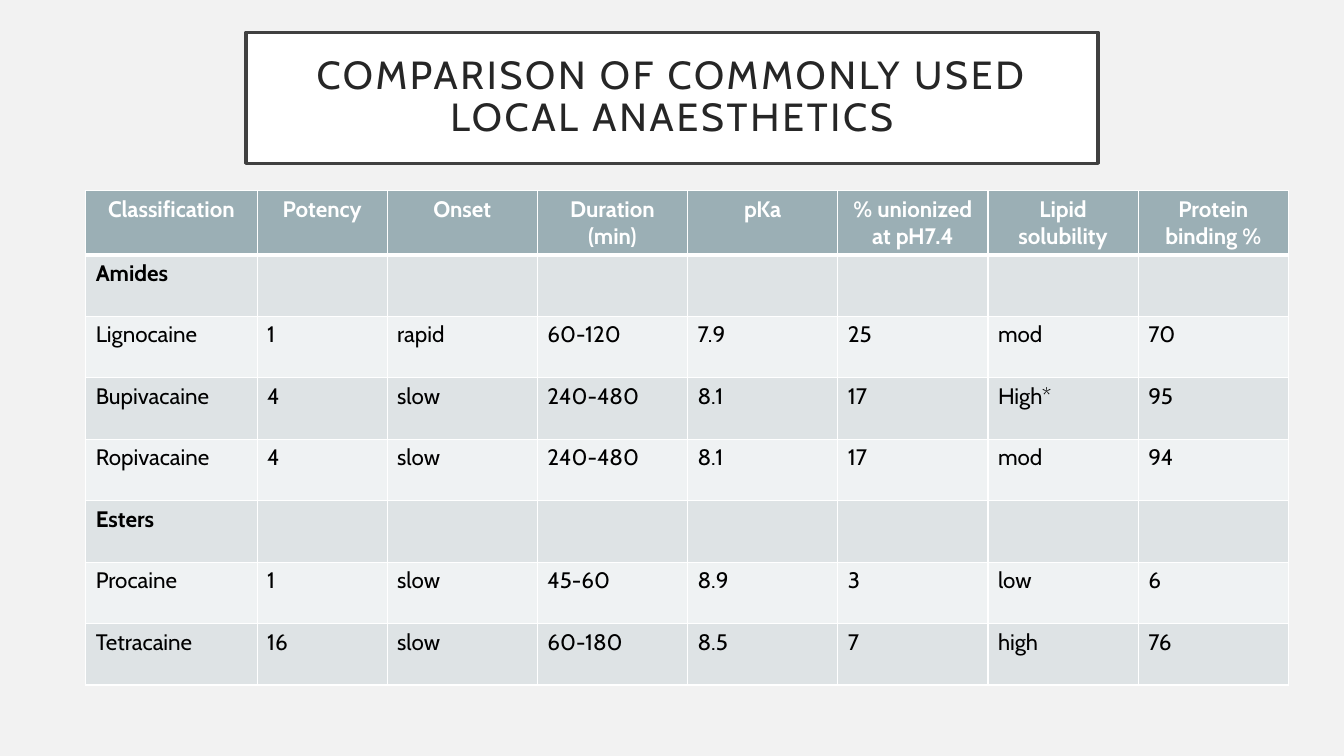
"""Build a slide with a table comparing commonly used local anaesthetics."""
from lxml import etree
from pptx import Presentation
from pptx import util as u
from pptx.dml.color import RGBColor
from pptx.enum import text
from pptx.oxml import ns


def color(value):
    return RGBColor.from_string(value)


def write(frame, words, size=16, ink="000000", bold=False, align=text.PP_ALIGN.LEFT, spacing=None, tracking=0):
    frame.text = words
    for paragraph in frame.paragraphs:
        paragraph.alignment = align
        paragraph.line_spacing = spacing
        for run in paragraph.runs:
            run.font.name = "Cabin"
            run.font.size = u.Pt(size)
            run.font.bold = bold
            run.font.color.rgb = color(ink)
            if tracking:
                run.font._element.set("spc", str(tracking * 100))


deck = Presentation()
deck.slide_width, deck.slide_height = u.Inches(13.33), u.Inches(7.5)
slide = deck.slides.add_slide(deck.slide_layouts[5])
slide.background.fill.solid()
slide.background.fill.fore_color.rgb = color("F2F2F2")

heading = slide.shapes.title
heading.left, heading.top = u.Inches(2.44), u.Inches(0.32)
heading.width, heading.height = u.Inches(8.45), u.Inches(1.3)
heading.fill.solid()
heading.fill.fore_color.rgb = color("FFFFFF")
heading.line.color.rgb = color("404040")
heading.line.width = u.Pt(2.5)
frame = heading.text_frame
frame.word_wrap = True
frame.auto_size = text.MSO_AUTO_SIZE.NONE
frame.vertical_anchor = text.MSO_ANCHOR.MIDDLE
frame.margin_left = frame.margin_right = frame.margin_top = frame.margin_bottom = u.Inches(0.2)
write(frame, "COMPARISON OF COMMONLY USED LOCAL ANAESTHETICS", size=28, ink="262626",
      align=text.PP_ALIGN.CENTER, spacing=0.9, tracking=2)

anaesthetics = [
    ["Classification", "Potency", "Onset", "Duration\n(min)", "pKa", "% unionized at pH7.4",
     "Lipid solubility", "Protein binding %"],
    ["Amides"],
    ["Lignocaine", "1", "rapid", "60-120", "7.9", "25", "mod", "70"],
    ["Bupivacaine", "4", "slow", "240-480", "8.1", "17", "High*", "95"],
    ["Ropivacaine", "4", "slow", "240-480", "8.1", "17", "mod", "94"],
    ["Esters"],
    ["Procaine", "1", "slow", "45-60", "8.9", "3", "low", "6"],
    ["Tetracaine", "16", "slow", "60-180", "8.5", "7", "high", "76"],
]
column_widths = [1.7, 1.29] + [1.49] * 6
row_height = 0.61
comparison = slide.shapes.add_table(
    len(anaesthetics), len(column_widths), u.Inches(0.85), u.Inches(1.89),
    u.Inches(sum(column_widths)), u.Inches(row_height * len(anaesthetics))).table
for column, width in zip(comparison.columns, column_widths):
    column.width = u.Inches(width)

for r, entries in enumerate(anaesthetics):
    comparison.rows[r].height = u.Inches(row_height)
    header, group = r == 0, len(entries) == 1
    band = "9BAFB5" if header else "DEE3E5" if r % 2 else "EFF2F3"
    for c in range(len(column_widths)):
        cell = comparison.cell(r, c)
        properties = cell._tc.get_or_add_tcPr()
        for side in "LRTB":
            thick = (r, side) in [(0, "B"), (1, "T")]
            border = etree.SubElement(properties, ns.qn(f"a:ln{side}"), w=str(u.Pt(3 if thick else 1)))
            paint = etree.SubElement(border, ns.qn("a:solidFill"))
            etree.SubElement(paint, ns.qn("a:srgbClr"), val="FFFFFF")
        cell.fill.solid()
        cell.fill.fore_color.rgb = color(band)
        if c < len(entries):
            write(cell.text_frame, entries[c], ink="FFFFFF" if header else "000000", bold=header or group,
                  align=text.PP_ALIGN.CENTER if header else text.PP_ALIGN.LEFT)

deck.save("out.pptx")
